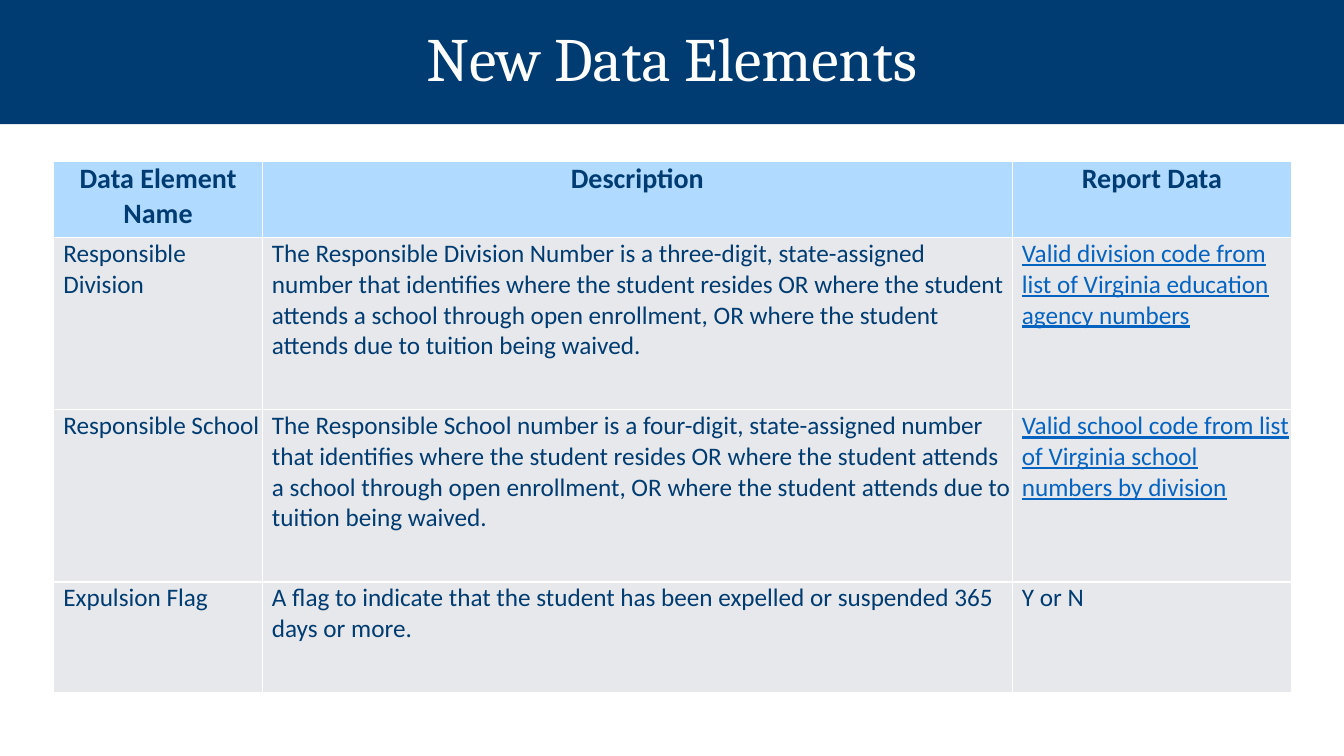
from lxml import etree
from pptx import Presentation
from pptx.dml.color import RGBColor
from pptx.enum import text
from pptx.oxml import ns
from pptx.util import Pt

NAVY, WHITE, LINK = "003C71", "FFFFFF", "0563C1"
HEADER_FILL, BODY_FILL = "B0DAFF", "E7E8EB"

HEADINGS = ["Data Element Name", "Description", "Report Data"]
ELEMENTS = [
    ["Responsible Division",
     "The Responsible Division Number is a three-digit, state-assigned number that "
     "identifies where the student resides OR where the student attends a school "
     "through open enrollment, OR where the student attends due to tuition being waived.",
     "Valid division code from list of Virginia education agency numbers"],
    ["Responsible School",
     "The Responsible School number is a four-digit, state-assigned number that "
     "identifies where the student resides OR where the student attends a school "
     "through open enrollment, OR where the student attends due to tuition being waived.",
     "Valid school code from list of Virginia school numbers by division"],
    ["Expulsion Flag",
     "A flag to indicate that the student has been expelled or suspended 365 days or more.",
     "Y or N"],
]


def color(value):
    return RGBColor.from_string(value)


class PageBuilder:
    """Holds the style and the current slide."""
    title_font, body_font = "Cambria", "Calibri"

    def __init__(self, deck):
        self.page = deck.slides.add_slide(deck.slide_layouts[5])

    def style(self, para, name, size, shade, bold=False, underline=False):
        font = para.font
        font.name, font.size = name, Pt(size)
        font.bold, font.underline = bold, underline
        font.color.rgb = color(shade)

    def title(self, words, width, height):
        box = self.page.shapes.title
        box.left, box.top, box.width, box.height = 0, 0, Pt(width), Pt(height)
        box.fill.solid()
        box.fill.fore_color.rgb = color(NAVY)
        frame = box.text_frame
        frame.text = words
        frame.vertical_anchor = text.MSO_ANCHOR.MIDDLE
        para = frame.paragraphs[0]
        para.alignment = text.PP_ALIGN.CENTER
        para.line_spacing = 0.9
        self.style(para, self.title_font, 44, WHITE)

    def borders(self, cell):
        properties = cell._tc.get_or_add_tcPr()
        for index, side in enumerate(("lnL", "lnR", "lnT", "lnB")):
            line = etree.Element(ns.qn("a:" + side), w=str(Pt(1)))
            fill = etree.SubElement(line, ns.qn("a:solidFill"))
            etree.SubElement(fill, ns.qn("a:srgbClr"), val=WHITE)
            properties.insert(index, line)

    def cell(self, cell, words, header, link):
        cell.text = words
        cell.margin_left = Pt(0.7 if header else 6.84)
        cell.margin_top = cell.margin_right = Pt(0.7)
        cell.margin_bottom = 0
        cell.fill.solid()
        cell.fill.fore_color.rgb = color(HEADER_FILL if header else BODY_FILL)
        para = cell.text_frame.paragraphs[0]
        para.alignment = text.PP_ALIGN.CENTER if header else text.PP_ALIGN.LEFT
        self.style(para, self.body_font, 20 if header else 18,
                   LINK if link else NAVY, bold=header, underline=link)
        self.borders(cell)

    def table(self, rows, left, top, widths, heights):
        frame = self.page.shapes.add_table(
            len(rows), len(widths), Pt(left), Pt(top), Pt(sum(widths)), Pt(sum(heights)))
        table = frame.table
        for column, width in zip(table.columns, widths):
            column.width = Pt(width)
        for row, height in zip(table.rows, heights):
            row.height = Pt(height)
        for r, row in enumerate(rows):
            for c, words in enumerate(row):
                self.cell(table.cell(r, c), words, header=r == 0,
                          link=words.startswith("Valid"))


def main():
    deck = Presentation()
    deck.slide_width, deck.slide_height = Pt(960), Pt(540)
    builder = PageBuilder(deck)

    # Title band
    builder.title("New Data Elements", 960, 88.6)

    # Data elements
    builder.table([HEADINGS] + ELEMENTS, 38.4, 115.2,
                  widths=[149, 535.7, 199.4], heights=[54.5, 123, 123, 79.2])

    deck.save("out.pptx")


if __name__ == "__main__":
    main()
